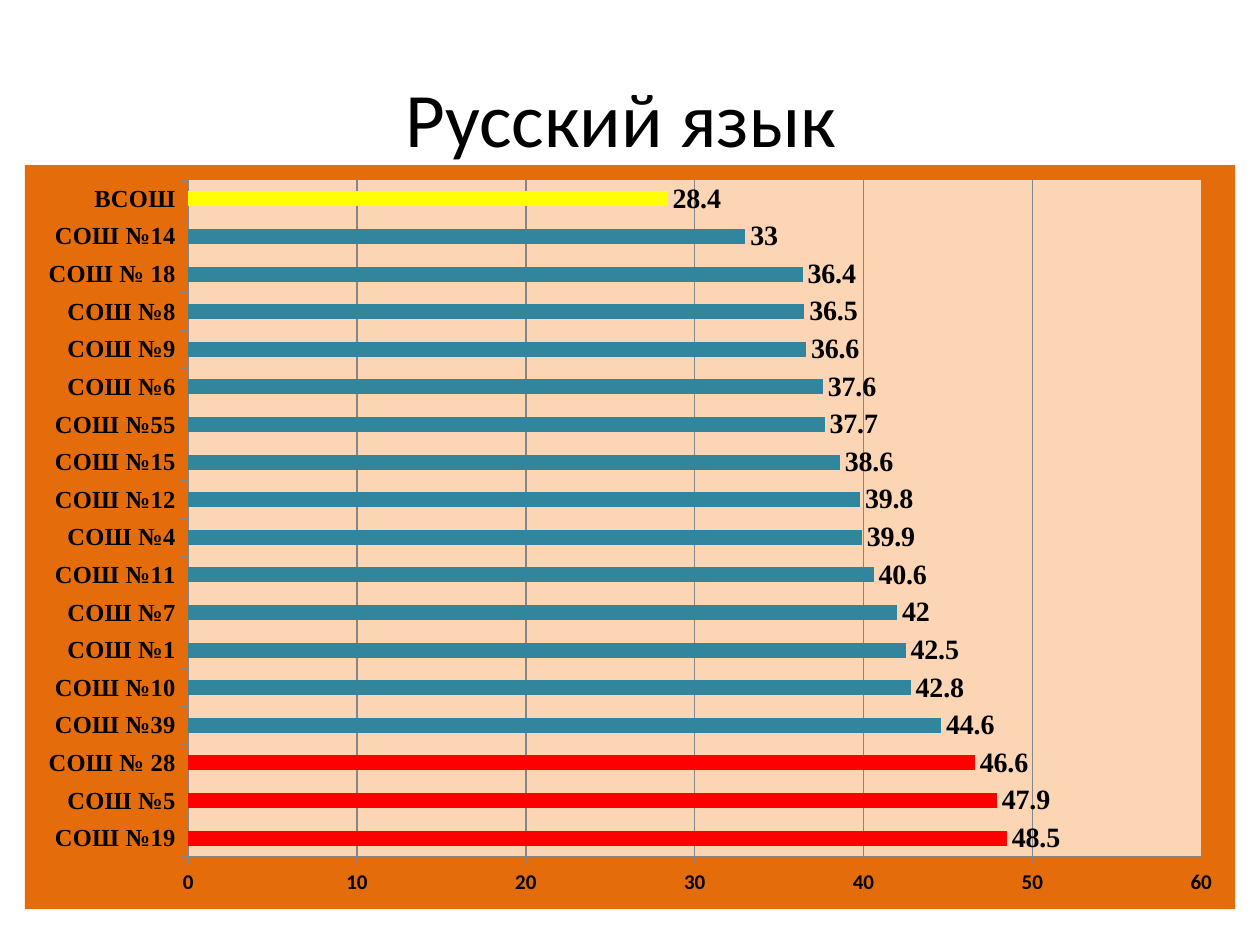
from pptx import Presentation
from pptx.chart.data import CategoryChartData
from pptx.dml.color import RGBColor
from pptx.enum.chart import XL_CHART_TYPE, XL_LABEL_POSITION, XL_TICK_MARK
from pptx.enum.text import MSO_ANCHOR, PP_ALIGN
from pptx.oxml import parse_xml
from pptx.oxml.ns import nsdecls, qn
from pptx.util import Cm, Pt

BAR = XL_CHART_TYPE.BAR_CLUSTERED
END = XL_LABEL_POSITION.OUTSIDE_END
OUT = XL_TICK_MARK.OUTSIDE
NONE = XL_TICK_MARK.NONE
MID = MSO_ANCHOR.MIDDLE
CENTER = PP_ALIGN.CENTER

BLACK = RGBColor(0x00, 0x00, 0x00)
GRAY = RGBColor(0x86, 0x86, 0x86)
TEAL = RGBColor(0x31, 0x85, 0x9C)
RED = RGBColor(0xFF, 0x00, 0x00)
YELLOW = RGBColor(0xFF, 0xFF, 0x00)
ORANGE = RGBColor(0xE4, 0x6C, 0x0A)
PEACH = RGBColor(0xFC, 0xD5, 0xB5)

SCORES = [
    ("СОШ №19", 48.5), ("СОШ №5", 47.9), ("СОШ № 28", 46.6),
    ("СОШ №39", 44.6), ("СОШ №10", 42.8), ("СОШ №1", 42.5),
    ("СОШ №7", 42), ("СОШ №11", 40.6), ("СОШ №4", 39.9),
    ("СОШ №12", 39.8), ("СОШ №15", 38.6), ("СОШ №55", 37.7),
    ("СОШ №6", 37.6), ("СОШ №9", 36.6), ("СОШ №8", 36.5),
    ("СОШ № 18", 36.4), ("СОШ №14", 33), ("ВСОШ", 28.4),
]


def style(font, size, name, bold):
    font.size = Pt(size)
    font.name = name
    font.bold = bold
    font.color.rgb = BLACK


def area(color):
    return parse_xml(
        f'<c:spPr {nsdecls("c", "a")}><a:solidFill><a:srgbClr val="{color}"/>'
        '</a:solidFill><a:ln><a:noFill/></a:ln></c:spPr>')


deck = Presentation()
deck.slide_width = Cm(25.4)
deck.slide_height = Cm(19.05)
slide = deck.slides.add_slide(deck.slide_layouts[6])

title = slide.shapes.add_textbox(Cm(1.27), Cm(0.76), Cm(22.86), Cm(3.18))
frame = title.text_frame
frame.word_wrap = True
frame.vertical_anchor = MID
head = frame.paragraphs[0]
head.text = "Русский язык "
head.alignment = CENTER
style(head.font, 44, "Calibri", False)

data = CategoryChartData()
data.categories = [school for school, score in SCORES]
data.add_series("Series 1", [score for school, score in SCORES])
chart = slide.shapes.add_chart(
    BAR, Cm(0.5), Cm(3.33), Cm(24.4), Cm(15), data).chart
chart.has_legend = False
chart.has_title = False
style(chart.font, 10, "Calibri", False)

plot = chart.plots[0]
plot.gap_width = 150
plot.vary_by_categories = False
bars = plot.series[0]
bars.format.fill.solid()
bars.format.fill.fore_color.rgb = TEAL
marks = {0: RED, 1: RED, 2: RED, len(SCORES) - 1: YELLOW}
for index, color in marks.items():
    fill = bars.points[index].format.fill
    fill.solid()
    fill.fore_color.rgb = color

labels = bars.data_labels
labels.show_value = True
labels.position = END
style(labels.font, 16, "Times New Roman", True)

schools = chart.category_axis
values = chart.value_axis
style(schools.tick_labels.font, 14, "Times New Roman", True)
style(values.tick_labels.font, 12, "Calibri", True)
values.minimum_scale = 0
values.maximum_scale = 60
values.major_unit = 10
values.has_major_gridlines = True
for line in (schools.format.line, values.format.line,
             values.major_gridlines.format.line):
    line.color.rgb = GRAY
    line.width = Pt(0.75)
for axis in (schools, values):
    axis.major_tick_mark = OUT
    axis.minor_tick_mark = NONE

root = chart.element
root.find(qn("c:chart")).addnext(area(ORANGE))
field = root.find(qn("c:chart")).find(qn("c:plotArea"))
for old in field.findall(qn("c:layout")):
    field.remove(old)
field.insert(0, parse_xml(
    f'<c:layout {nsdecls("c")}><c:manualLayout>'
    '<c:layoutTarget val="inner"/><c:xMode val="edge"/><c:yMode val="edge"/>'
    '<c:x val="0.135"/><c:y val="0.02"/><c:w val="0.837"/><c:h val="0.91"/>'
    '</c:manualLayout></c:layout>'))
field.append(area(PEACH))

deck.save("out.pptx")
